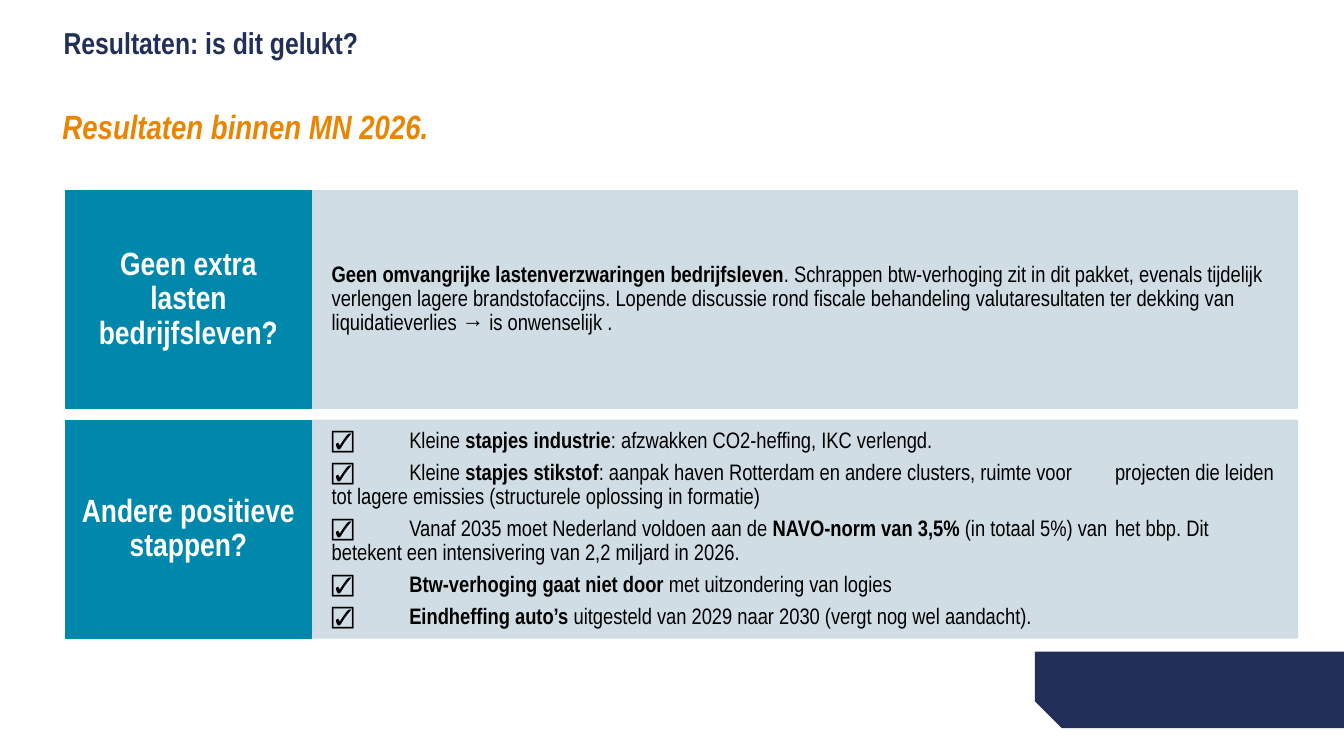
from dataclasses import dataclass

from lxml import etree
from pptx import Presentation
from pptx import util as u
from pptx.dml.color import RGBColor
from pptx.enum import shapes, text
from pptx.oxml.ns import qn


@dataclass(frozen=True)
class Theme:
    font: str = "Arial Narrow"
    navy: str = "222F58"
    orange: str = "E98500"
    teal: str = "0088AC"
    mist: str = "CCDAE3"
    black: str = "000000"
    white: str = "FFFFFF"
    title_size: float = 21.6
    subtitle_size: float = 24
    label_size: float = 23
    body_size: float = 16
    mist_opacity: int = 90


@dataclass(frozen=True)
class Area:
    """Left, top, width and height in percent of the slide."""
    left: float
    top: float
    width: float
    height: float


@dataclass(frozen=True)
class Style:
    size: float
    color: str
    bold: bool = False
    italic: bool = False
    centred: bool = False
    space_after: float = 0
    tabs: tuple[float, ...] = ()


@dataclass(frozen=True)
class Row:
    label: str
    paragraphs: tuple[str, ...]  # ** switches bold on and off


THEME = Theme()
TITLE = Style(THEME.title_size, THEME.navy, bold=True)
SUBTITLE = Style(THEME.subtitle_size, THEME.orange, bold=True, italic=True)
LABEL = Style(THEME.label_size, THEME.white, bold=True, centred=True)
BODY = Style(THEME.body_size, THEME.black, space_after=5.6, tabs=(0.77, 7.77))

# Grid of the two rows, in percent of the slide
LABEL_LEFT, LABEL_WIDTH = 4.88, 18.3
BODY_LEFT, BODY_WIDTH = 23.25, 73.28
FIRST_TOP, ROW_HEIGHT, ROW_PITCH = 25.2, 28.8, 30.4

ROWS = (
    Row("Geen extra lasten bedrijfsleven?", (
        "**Geen omvangrijke lastenverzwaringen bedrijfsleven**. Schrappen btw-verhoging zit in dit "
        "pakket, evenals tijdelijk verlengen lagere brandstofaccijns. Lopende discussie rond fiscale "
        "behandeling valutaresultaten ter dekking van liquidatieverlies → is onwenselijk .",
    )),
    Row("Andere positieve stappen?", (
        "☑\tKleine **stapjes industrie**: afzwakken CO2-heffing, IKC verlengd.",
        "☑\tKleine **stapjes stikstof**: aanpak haven Rotterdam en andere clusters, ruimte voor "
        "\tprojecten die leiden tot lagere emissies (structurele oplossing in formatie)",
        "☑\tVanaf 2035 moet Nederland voldoen aan de **NAVO-norm van 3,5% **(in totaal 5%) van "
        "\thet bbp. Dit betekent een intensivering van 2,2 miljard in 2026.",
        "☑\t**Btw-verhoging gaat niet door **met uitzondering van logies",
        "☑\t**Eindheffing auto’s **uitgesteld van 2029 naar 2030 (vergt nog wel aandacht).",
    )),
)

deck = Presentation()
deck.slide_width, deck.slide_height = u.Inches(13.33), u.Inches(7.5)
page = deck.slides.add_slide(deck.slide_layouts[6])


def place(area: Area) -> tuple[int, int, int, int]:
    across, down = deck.slide_width / 100, deck.slide_height / 100
    return (round(area.left * across), round(area.top * down),
            round(area.width * across), round(area.height * down))


def add_block(kind: shapes.MSO_SHAPE, area: Area, color: str, opacity: int = 100):
    block = page.shapes.add_shape(kind, *place(area))
    block.shadow.inherit = False
    block.fill.solid()
    block.line.width = u.Pt(1)
    for paint in (block.fill.fore_color, block.line.color):
        paint.rgb = RGBColor.from_string(color)
    if opacity < 100:
        for tone in block._element.spPr.iter(qn("a:srgbClr")):
            etree.SubElement(tone, qn("a:alpha"), val=str(opacity * 1000))
    return block


def write(box, paragraphs: tuple[str, ...], style: Style,
          anchor: text.MSO_ANCHOR, left: float, right: float) -> None:
    frame = box.text_frame
    frame.word_wrap = True
    frame.vertical_anchor = anchor
    frame.margin_left, frame.margin_right = u.Inches(left), u.Inches(right)
    frame.margin_top = frame.margin_bottom = 0
    for index, content in enumerate(paragraphs):
        para = frame.paragraphs[0] if index == 0 else frame.add_paragraph()
        para.alignment = text.PP_ALIGN.CENTER if style.centred else text.PP_ALIGN.LEFT
        para.line_spacing = 0.9
        para.space_after = u.Pt(style.space_after)
        if "\t" in content:
            stops = etree.SubElement(para._p.get_or_add_pPr(), qn("a:tabLst"))
            for stop in style.tabs:
                etree.SubElement(stops, qn("a:tab"), pos=str(u.Inches(stop)), algn="l")
        font = para.font
        font.name, font.size = THEME.font, u.Pt(style.size)
        font.bold, font.italic = style.bold, style.italic
        font.color.rgb = RGBColor.from_string(style.color)
        for part, words in enumerate(content.split("**")):
            if words:
                span = para.add_run()
                span.text = words
                if part % 2:
                    span.font.bold = True


def add_heading(area: Area, words: str, style: Style) -> None:
    box = page.shapes.add_textbox(*place(area))
    write(box, (words,), style, text.MSO_ANCHOR.TOP, 0, 0.2)


def add_row(row: Row, top: float) -> None:
    body = add_block(shapes.MSO_SHAPE.RECTANGLE, Area(BODY_LEFT, top, BODY_WIDTH, ROW_HEIGHT),
                     THEME.mist, THEME.mist_opacity)
    write(body, row.paragraphs, BODY, text.MSO_ANCHOR.MIDDLE, 0.19, 0.19)
    label = add_block(shapes.MSO_SHAPE.RECTANGLE, Area(LABEL_LEFT, top, LABEL_WIDTH, ROW_HEIGHT),
                      THEME.teal)
    write(label, (row.label,), LABEL, text.MSO_ANCHOR.MIDDLE, 0.13, 0.13)


# Corner block with the snipped edge
corner = add_block(shapes.MSO_SHAPE.SNIP_1_RECTANGLE, Area(77, 86.2, 23, 10.1), THEME.navy)
corner.rotation = 180
corner.adjustments[0] = 0.35
corner.line.fill.background()

# Headings
add_heading(Area(4.73, 3.73, 39.45, 9.33), "Resultaten: is dit gelukt?", TITLE)
add_heading(Area(4.65, 14.67, 39.45, 6.93), "Resultaten binnen MN 2026.", SUBTITLE)

# Question rows
for number, row in enumerate(ROWS):
    add_row(row, FIRST_TOP + number * ROW_PITCH)

deck.save("out.pptx")
